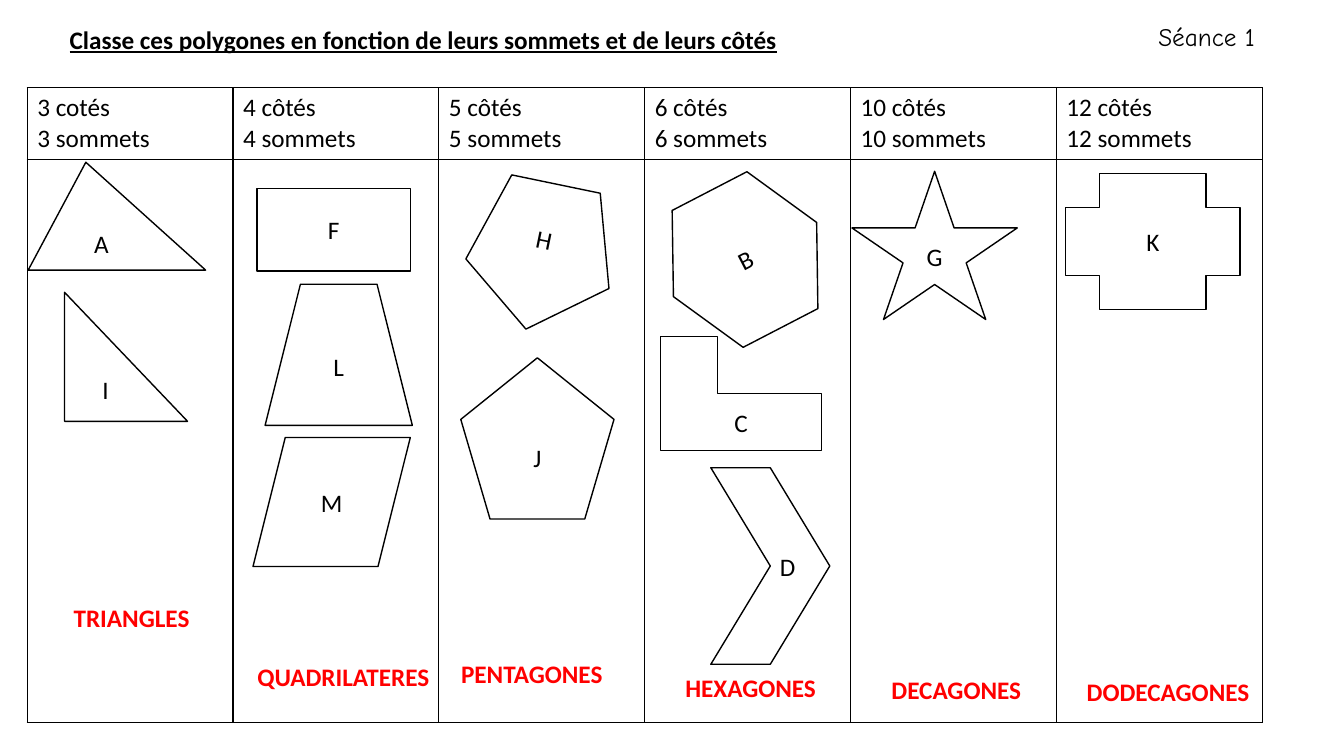
from dataclasses import dataclass

from lxml import etree
from pptx import Presentation
from pptx.dml.color import RGBColor
from pptx.enum.shapes import MSO_SHAPE
from pptx.enum.text import MSO_ANCHOR, PP_ALIGN
from pptx.oxml.ns import qn
from pptx.util import Inches, Pt

LEFT, CENTER = PP_ALIGN.LEFT, PP_ALIGN.CENTER
TOP, MIDDLE = MSO_ANCHOR.TOP, MSO_ANCHOR.MIDDLE


@dataclass(frozen=True)
class Theme:
    black: RGBColor = RGBColor(0, 0, 0)
    white: RGBColor = RGBColor(255, 255, 255)
    answer: RGBColor = RGBColor(255, 0, 0)
    font: str = "Calibri"
    session_font: str = "Comic Neue"
    size: Pt = Pt(18)
    line: Pt = Pt(1)


THEME = Theme()

TITLE = "Classe ces polygones en fonction de leurs sommets et de leurs côtés"
SESSION = "Séance 1"

HEADINGS = [
    "3 cotés\n3 sommets",
    "4 côtés\n4 sommets",
    "5 côtés\n5 sommets",
    "6 côtés\n6 sommets",
    "10 côtés\n10 sommets",
    "12 côtés\n12 sommets",
]

# letter, preset shape, left, top, width, height, rotation in degrees
POLYGONS = [
    ("A", MSO_SHAPE.ISOSCELES_TRIANGLE, 0.28, 1.61, 1.76, 1.07, 0),
    ("I", MSO_SHAPE.RIGHT_TRIANGLE, 0.64, 2.9, 1.22, 1.28, 0),
    ("F", MSO_SHAPE.RECTANGLE, 2.55, 1.87, 1.52, 0.82, 0),
    ("L", MSO_SHAPE.TRAPEZOID, 2.63, 2.82, 1.46, 1.4, 0),
    ("M", MSO_SHAPE.PARALLELOGRAM, 2.51, 4.34, 1.56, 1.28, 0),
    ("H", MSO_SHAPE.REGULAR_PENTAGON, 4.64, 1.81, 1.45, 1.47, 191.7),
    ("J", MSO_SHAPE.REGULAR_PENTAGON, 4.57, 3.55, 1.52, 1.6, 0),
    ("B", MSO_SHAPE.HEXAGON, 6.59, 1.81, 1.6, 1.53, 332.6),
    ("C", MSO_SHAPE.CORNER, 6.55, 3.34, 1.6, 1.13, 0),
    ("D", MSO_SHAPE.CHEVRON, 7.05, 4.64, 1.18, 1.95, 0),
    ("G", MSO_SHAPE.STAR_5_POINT, 8.45, 1.7, 1.64, 1.47, 0),
    ("K", MSO_SHAPE.CROSS, 10.57, 1.72, 1.73, 1.35, 0),
]

# family name, left, top
ANSWERS = [
    ("TRIANGLES", 0.29, 5.93),
    ("QUADRILATERES", 2.39, 6.51),
    ("PENTAGONES", 4.26, 6.48),
    ("HEXAGONES", 6.43, 6.62),
    ("DECAGONES", 8.47, 6.64),
    ("DODECAGONES", 10.57, 6.66),
]

TABLE_LEFT, TABLE_TOP, TABLE_WIDTH = 0.27, 0.87, 12.25
ROW_HEIGHTS = (0.71, 5.59)
LABEL_HEIGHT = 0.4
ANSWER_WIDTH = 2.03


def write(text_frame, text, align=LEFT, anchor=TOP, color=THEME.black,
          font=THEME.font, bold=False, underline=False):
    text_frame.text = text
    text_frame.vertical_anchor = anchor
    for paragraph in text_frame.paragraphs:
        paragraph.alignment = align
        for run in paragraph.runs:
            run.font.name = font
            run.font.size = THEME.size
            run.font.color.rgb = color
            run.font.bold = bold
            run.font.underline = underline


def add_label(slide, text, left, top, width, wrap=True, **style):
    box = slide.shapes.add_textbox(
        Inches(left), Inches(top), Inches(width), Inches(LABEL_HEIGHT))
    box.text_frame.word_wrap = wrap
    write(box.text_frame, text, **style)


def add_title(slide):
    title = slide.shapes.title
    title.left, title.top = Inches(0.59), Inches(0.19)
    title.width, title.height = Inches(7.27), Inches(LABEL_HEIGHT)
    title.text_frame.word_wrap = False
    write(title.text_frame, TITLE, bold=True, underline=True)


def draw_borders(cell):
    properties = cell._tc.get_or_add_tcPr()
    for side in ("a:lnL", "a:lnR", "a:lnT", "a:lnB"):
        line = etree.SubElement(properties, qn(side), w=str(THEME.line))
        fill = etree.SubElement(line, qn("a:solidFill"))
        etree.SubElement(fill, qn("a:srgbClr"), val=str(THEME.black))


def add_sorting_table(slide):
    table = slide.shapes.add_table(
        len(ROW_HEIGHTS), len(HEADINGS), Inches(TABLE_LEFT), Inches(TABLE_TOP),
        Inches(TABLE_WIDTH), Inches(sum(ROW_HEIGHTS))).table
    table.first_row = table.horz_banding = False
    for row, height in zip(table.rows, ROW_HEIGHTS):
        row.height = Inches(height)
    for column in table.columns:
        column.width = Inches(TABLE_WIDTH / len(HEADINGS))
    for cell in table.iter_cells():
        draw_borders(cell)
        cell.fill.background()
    for index, heading in enumerate(HEADINGS):
        write(table.cell(0, index).text_frame, heading)


def add_polygon(slide, letter, preset, left, top, width, height, rotation):
    polygon = slide.shapes.add_shape(
        preset, Inches(left), Inches(top), Inches(width), Inches(height))
    polygon.shadow.inherit = False
    polygon.rotation = rotation
    polygon.fill.solid()
    polygon.fill.fore_color.rgb = THEME.white
    polygon.line.color.rgb = THEME.black
    polygon.line.width = THEME.line
    write(polygon.text_frame, letter, align=CENTER, anchor=MIDDLE)
    return polygon


def main():
    presentation = Presentation()
    presentation.slide_width = Inches(13.33)
    presentation.slide_height = Inches(7.5)
    slide = presentation.slides.add_slide(presentation.slide_layouts[5])

    add_title(slide)
    add_label(slide, SESSION, 11.39, 0.16, 1.23, wrap=False,
              font=THEME.session_font)
    add_sorting_table(slide)

    polygons = {row[0]: add_polygon(slide, *row) for row in POLYGONS}
    polygons["A"].adjustments[0] = 0.325
    # The chevron's letter sits right of centre; H is turned back upright.
    polygons["D"].text_frame.margin_left = Inches(0.44)
    polygons["H"].text_frame._txBody.bodyPr.set("rot", str(180 * 60000))

    for name, left, top in ANSWERS:
        add_label(slide, name, left, top, ANSWER_WIDTH, align=CENTER,
                  color=THEME.answer, bold=True)

    presentation.save("out.pptx")


if __name__ == "__main__":
    main()
